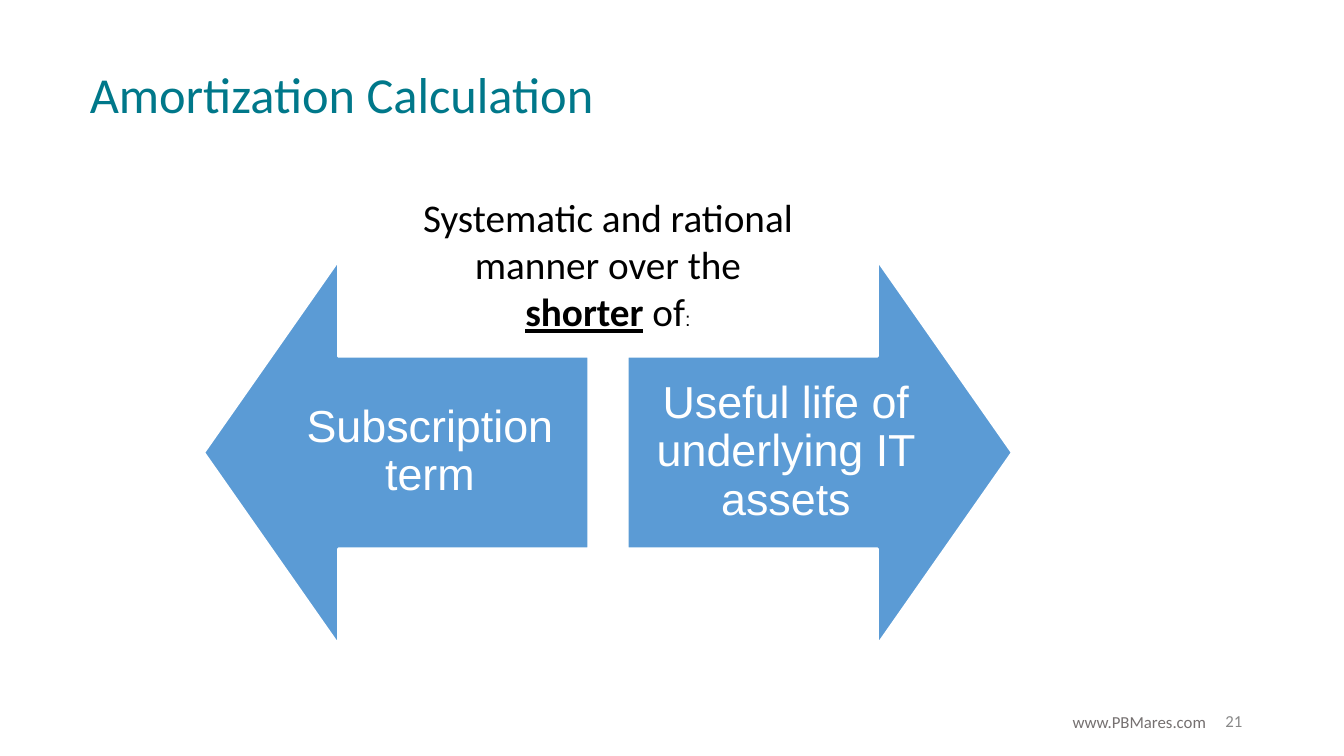
from dataclasses import dataclass

from pptx import Presentation
from pptx.dml.color import RGBColor
from pptx.enum.shapes import MSO_SHAPE
from pptx.enum.text import MSO_ANCHOR, MSO_AUTO_SIZE, PP_ALIGN
from pptx.util import Pt

UP_ARROW = MSO_SHAPE.UP_ARROW
TOP, MIDDLE = MSO_ANCHOR.TOP, MSO_ANCHOR.MIDDLE
LEFT, CENTER, RIGHT = PP_ALIGN.LEFT, PP_ALIGN.CENTER, PP_ALIGN.RIGHT

# Content
TITLE = "Amortization Calculation"
PERIODS = [  # text, rotation, arrow left, label left
    ("Subscription term", 270, 202, 269),
    ("Useful life of underlying IT assets", 90, 622, 622),
]
SITE = "www.PBMares.com"
PAGE = "21"


@dataclass(frozen=True)
class Theme:
    teal: str = "00788A"
    blue: str = "5B9BD5"
    white: str = "FFFFFF"
    black: str = "000000"
    site_gray: str = "757070"
    page_gray: str = "888888"
    body: str = "Calibri"
    label: str = "Arial"
    title_size: int = 36
    label_size: int = 32
    lead_size: int = 28
    footer_size: int = 12
    colon_size: int = 14


THEME = Theme()
LEAD = [  # text, font format
    ("Systematic and rational manner over the ", {}),
    ("shorter", {"bold": True, "underline": True}),
    (" of", {}),
    (":", {"size": Pt(THEME.colon_size), "name": THEME.label}),
]

# Lengths in px, 100 px to the inch
PX = 9144
ARROW_TOP, ARROW_SIDE = 258, 382
LABEL_TOP, LABEL_WIDTH, LABEL_HEIGHT = 353, 315, 191


def px(*lengths):
    return [length * PX for length in lengths]


def write(box, runs, size, color, font=THEME.body, align=LEFT, anchor=TOP, inset=(10, 5)):
    """Fill a box with one paragraph of formatted runs."""
    frame = box.text_frame
    across, down = px(*inset)
    frame_format = {
        "word_wrap": True, "auto_size": MSO_AUTO_SIZE.NONE, "vertical_anchor": anchor,
        "margin_left": across, "margin_right": across,
        "margin_top": down, "margin_bottom": down,
    }
    for name, value in frame_format.items():
        setattr(frame, name, value)
    paragraph = frame.paragraphs[0]
    paragraph.alignment = align
    for text, changes in runs:
        run = paragraph.add_run()
        run.text = text
        for name, value in {"size": Pt(size), "name": font, **changes}.items():
            setattr(run.font, name, value)
        run.font.color.rgb = RGBColor.from_string(color)
    return paragraph


def main():
    deck = Presentation()
    deck.slide_width, deck.slide_height = px(1333, 750)
    slide = deck.slides.add_slide(deck.slide_layouts[5])
    shapes = slide.shapes

    # Title
    title = shapes.title
    title.left, title.top, title.width, title.height = px(79, 58, 913, 71)
    write(title, [(TITLE, {})], THEME.title_size, THEME.teal)

    # Footer
    page = shapes.add_textbox(*px(942, 695, 300, 40))
    write(page, [(PAGE, {})], THEME.footer_size, THEME.page_gray, align=RIGHT, anchor=MIDDLE)
    site = shapes.add_textbox(*px(1054, 701, 237, 30))
    write(site, [(SITE, {})], THEME.footer_size, THEME.site_gray)

    # Opposing arrows with their labels
    for period, rotation, arrow_left, label_left in PERIODS:
        arrow = shapes.add_shape(UP_ARROW, *px(arrow_left, ARROW_TOP, ARROW_SIDE, ARROW_SIDE))
        arrow.rotation = rotation
        arrow.adjustments[0], arrow.adjustments[1] = 0.5, 0.35
        arrow.shadow.inherit = False
        arrow.fill.solid()
        arrow.fill.fore_color.rgb = RGBColor.from_string(THEME.blue)
        arrow.line.color.rgb = RGBColor.from_string(THEME.white)
        arrow.line.width = Pt(2)
        label = shapes.add_textbox(*px(label_left, LABEL_TOP, LABEL_WIDTH, LABEL_HEIGHT))
        paragraph = write(label, [(period, {})], THEME.label_size, THEME.white, THEME.label,
                          CENTER, MIDDLE, (25, 25))
        paragraph.line_spacing = 0.9

    # Lead-in above the arrows
    lead = shapes.add_textbox(*px(403, 187, 400, 151))
    write(lead, LEAD, THEME.lead_size, THEME.black, align=CENTER)

    deck.save("out.pptx")


if __name__ == "__main__":
    main()
